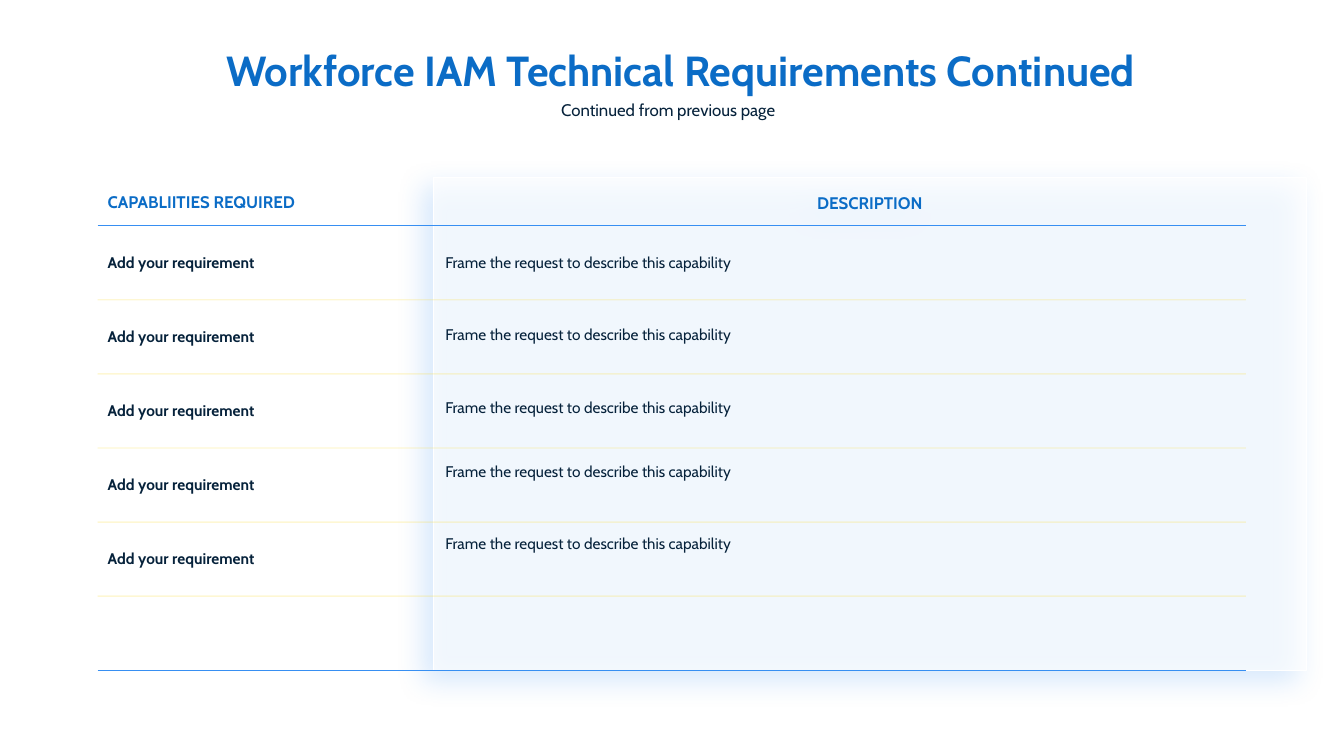
from lxml import etree
from pptx import Presentation
from pptx.dml.color import RGBColor
from pptx.enum.shapes import MSO_CONNECTOR, MSO_SHAPE
from pptx.enum.text import MSO_ANCHOR, MSO_AUTO_SIZE, PP_ALIGN
from pptx.oxml import parse_xml
from pptx.oxml.ns import nsdecls, qn
from pptx.util import Pt

LEFT, CENTER = PP_ALIGN.LEFT, PP_ALIGN.CENTER
TOP, MIDDLE = MSO_ANCHOR.TOP, MSO_ANCHOR.MIDDLE
FIT_SHAPE = MSO_AUTO_SIZE.SHAPE_TO_FIT_TEXT
RECTANGLE = MSO_SHAPE.RECTANGLE
STRAIGHT = MSO_CONNECTOR.STRAIGHT

WHITE = RGBColor(0xFF, 0xFF, 0xFF)
NAVY = RGBColor(0x06, 0x22, 0x3B)
BLUE = RGBColor(0x0B, 0x6C, 0xC6)
SKY = RGBColor(0x37, 0x8F, 0xF2)
YELLOW = RGBColor(0xFC, 0xDA, 0x27)

FONT = "Cabin"
TABLE_LEFT, TABLE_RIGHT = 69.8, 889.9
HEADER_LINE = 161.2
ROW_HEIGHT = 52.93
ROWS = 6

deck = Presentation()
deck.slide_width, deck.slide_height = Pt(960), Pt(540)
page = deck.slides.add_slide(deck.slide_layouts[6])


def write(frame, text, size, color, bold=False, align=LEFT):
    para = frame.paragraphs[0]
    para.alignment = align
    span = para.add_run()
    span.text = text
    span.font.name = FONT
    span.font.size = Pt(size)
    span.font.bold = bold
    span.font.color.rgb = color


def add_text(left, top, width, height, text, size, color, bold=False,
             align=LEFT, anchor=MIDDLE):
    box = page.shapes.add_textbox(Pt(left), Pt(top), Pt(width), Pt(height))
    frame = box.text_frame
    frame.word_wrap = True
    frame.auto_size = FIT_SHAPE
    frame.vertical_anchor = anchor
    write(frame, text, size, color, bold, align)


# Subtitle
add_text(393.8, 67.7, 172.1, 21.8, "Continued from previous page", 12, NAVY, anchor=TOP)

# Description panel: translucent white with a soft blue shadow
panel = page.shapes.add_shape(RECTANGLE, Pt(309.6), Pt(126.7), Pt(623.5), Pt(352.1))
panel.fill.solid()
panel.fill.fore_color.rgb = WHITE
fill_color = panel.fill._xPr.find(qn("a:solidFill"))[0]
etree.SubElement(fill_color, qn("a:alpha"), val="65000")
panel.line.color.rgb = WHITE
panel.line.width = Pt(0.5)
panel._element.spPr.append(parse_xml(
    f'<a:effectLst {nsdecls("a")}><a:outerShdw blurRad="{Pt(20)}" dist="{Pt(10)}" '
    f'dir="8100000" algn="tr" rotWithShape="0"><a:srgbClr val="{SKY}">'
    '<a:alpha val="30000"/></a:srgbClr></a:outerShdw></a:effectLst>'))
panel_frame = panel.text_frame
panel_frame.word_wrap = True
panel_frame.vertical_anchor = TOP
panel_frame.margin_top = Pt(10.8)
write(panel_frame, "DESCRIPTION", 12, BLUE, True, CENTER)

# Requirement column
add_text(TABLE_LEFT, 133.2, 150.5, 21.8, "CAPABLIITIES REQUIRED", 12, BLUE, True)
for row in range(ROWS - 1):
    add_text(TABLE_LEFT, 177.1 + row * ROW_HEIGHT, 124.6, 20.6,
             "Add your requirement", 11, NAVY, True)

# Description column: the last two boxes are taller and start higher
for top, height in ((177.1, 20.5), (229, 20.5), (280.8, 20.5), (326.2, 33.1), (378, 33.1)):
    add_text(311, top, 578.2, height, "Frame the request to describe this capability",
             11, NAVY, anchor=TOP)

# Row lines: solid blue at both ends, faint yellow between
for index in range(ROWS + 1):
    y = Pt(HEADER_LINE + index * ROW_HEIGHT)
    rule = page.shapes.add_connector(STRAIGHT, Pt(TABLE_LEFT), y, Pt(TABLE_RIGHT), y)
    rule.line.width = Pt(1)
    is_end = index in (0, ROWS)
    rule.line.color.rgb = SKY if is_end else YELLOW
    if not is_end:
        line_color = rule.line.fill._xPr.find(qn("a:solidFill"))[0]
        etree.SubElement(line_color, qn("a:alpha"), val="20000")
    etree.SubElement(rule._element.spPr, qn("a:effectLst"))

# Title
add_text(35.3, 28.1, 895, 43.9, " Workforce IAM Technical Requirements Continued",
         30, BLUE, True, CENTER, TOP)

deck.save("out.pptx")
